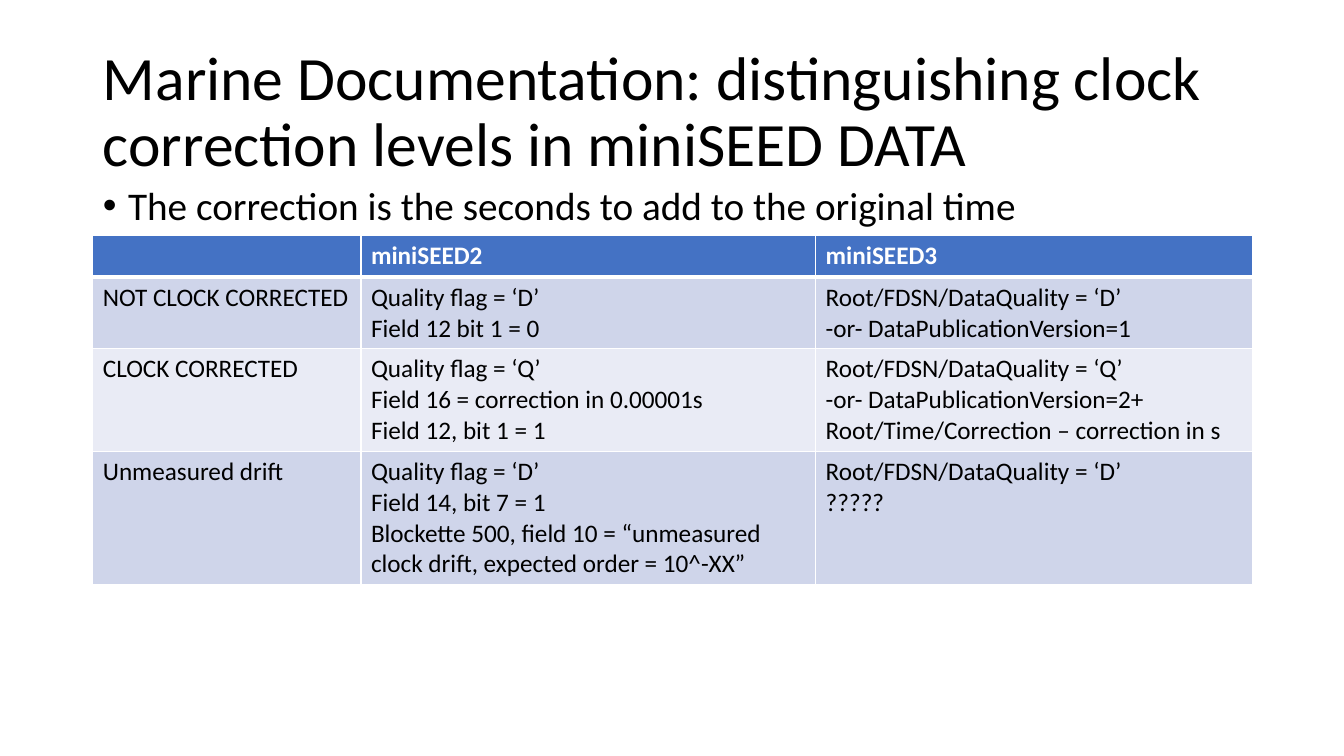
from dataclasses import dataclass

from lxml.etree import SubElement
from pptx import Presentation
from pptx.dml.color import RGBColor
from pptx.enum.text import MSO_ANCHOR as Anchor, MSO_AUTO_SIZE as AutoSize, PP_ALIGN as Align
from pptx.oxml import parse_xml
from pptx.oxml.ns import nsdecls, qn
from pptx.util import Inches, Pt


@dataclass(frozen=True)
class Theme:
    font: str = "Calibri"
    ink: str = "000000"
    white: str = "FFFFFF"
    header_fill: str = "4472C4"
    bands: tuple[str, str] = ("CFD5EA", "E9EBF5")
    title_size: int = 44
    body_size: int = 28
    table_size: int = 18
    thin_rule: int = 1
    header_rule: int = 3


@dataclass(frozen=True)
class Level:
    name: str
    height: float
    miniseed2: tuple[str, ...]
    miniseed3: tuple[str, ...]


THEME = Theme()
LEFT, WIDTH = 0.92, 11.5
COLUMN_WIDTHS = (2.66, 4.51, 4.33)
LEVELS = (
    Level("", 0.41, ("miniSEED2",), ("miniSEED3",)),
    Level("NOT CLOCK CORRECTED", 0.71,
          ("Quality flag = ‘D’", "Field 12 bit 1 = 0"),
          ("Root/FDSN/DataQuality = ‘D’", "-or- DataPublicationVersion=1")),
    Level("CLOCK CORRECTED", 1.02,
          ("Quality flag = ‘Q’", "Field 16 = correction in 0.00001s", "Field 12, bit 1 = 1"),
          ("Root/FDSN/DataQuality = ‘Q’", "-or- DataPublicationVersion=2+",
           "Root/Time/Correction – correction in s")),
    Level("Unmeasured drift", 1.32,
          ("Quality flag = ‘D’", "Field 14, bit 7 = 1",
           "Blockette 500, field 10 = “unmeasured clock drift, expected order = 10^-XX”"),
          ("Root/FDSN/DataQuality = ‘D’", "?????")),
)


def add_span(para, text: str, size: int, color: str, bold: bool = False) -> None:
    span = para.add_run()
    span.text = text
    span.font.name = THEME.font
    span.font.size = Pt(size)
    span.font.bold = bold
    span.font.color.rgb = RGBColor.from_string(color)


def fill_placeholder(box, top: float, height: float, anchor: Anchor, text: str, size: int):
    box.left, box.top = Inches(LEFT), Inches(top)
    box.width, box.height = Inches(WIDTH), Inches(height)
    frame = box.text_frame
    frame.word_wrap = True
    frame.auto_size = AutoSize.NONE
    frame.vertical_anchor = anchor
    para = frame.paragraphs[0]
    para.alignment = Align.LEFT
    para.line_spacing = 0.9
    add_span(para, text, size, THEME.ink)
    return para


def add_bullet(para, indent: float) -> None:
    properties = para._p.get_or_add_pPr()
    properties.set("marL", str(Inches(indent)))
    properties.set("indent", str(-Inches(indent)))
    SubElement(properties, qn("a:buFont"), typeface="Arial")
    SubElement(properties, qn("a:buChar"), char="•")


def set_borders(cell, top: int, bottom: int) -> None:
    properties = cell._tc.get_or_add_tcPr()
    sides = {"lnL": THEME.thin_rule, "lnR": THEME.thin_rule, "lnT": top, "lnB": bottom}
    for position, (side, width) in enumerate(sides.items()):
        properties.insert(position, parse_xml(
            f'<a:{side} {nsdecls("a")} w="{Pt(width)}"><a:solidFill>'
            f'<a:srgbClr val="{THEME.white}"/></a:solidFill></a:{side}>'))


def fill_cell(cell, lines: tuple[str, ...], row: int) -> None:
    header = row == 0
    cell.fill.solid()
    cell.fill.fore_color.rgb = RGBColor.from_string(
        THEME.header_fill if header else THEME.bands[(row - 1) % 2])
    set_borders(cell,
                THEME.header_rule if row == 1 else THEME.thin_rule,
                THEME.header_rule if header else THEME.thin_rule)
    frame = cell.text_frame
    for number, line in enumerate(lines):
        para = frame.add_paragraph() if number else frame.paragraphs[0]
        if line:
            add_span(para, line, THEME.table_size, THEME.white if header else THEME.ink, header)


def add_levels_table(page, levels: tuple[Level, ...]) -> None:
    table = page.shapes.add_table(
        len(levels), len(COLUMN_WIDTHS), Inches(LEFT), Inches(2.34),
        Inches(WIDTH), Inches(sum(level.height for level in levels))).table
    for column, width in zip(table.columns, COLUMN_WIDTHS):
        column.width = Inches(width)
    for row, level in enumerate(levels):
        table.rows[row].height = Inches(level.height)
        for column, lines in enumerate(((level.name,), level.miniseed2, level.miniseed3)):
            fill_cell(table.cell(row, column), lines, row)


def main() -> None:
    deck = Presentation()
    deck.slide_width, deck.slide_height = Inches(13.33), Inches(7.5)
    page = deck.slides.add_slide(deck.slide_layouts[1])

    # Title
    fill_placeholder(page.shapes.title, 0.4, 1.45, Anchor.MIDDLE,
                     "Marine Documentation: distinguishing clock correction levels in miniSEED DATA",
                     THEME.title_size)

    # Bullet above the table
    para = fill_placeholder(page.placeholders[1], 1.8, 5.3, Anchor.TOP,
                            "The correction is the seconds to add to the original time",
                            THEME.body_size)
    para.space_before = Pt(10)
    add_bullet(para, 0.25)

    # Correction levels by format version
    add_levels_table(page, LEVELS)

    deck.save("out.pptx")


if __name__ == "__main__":
    main()
